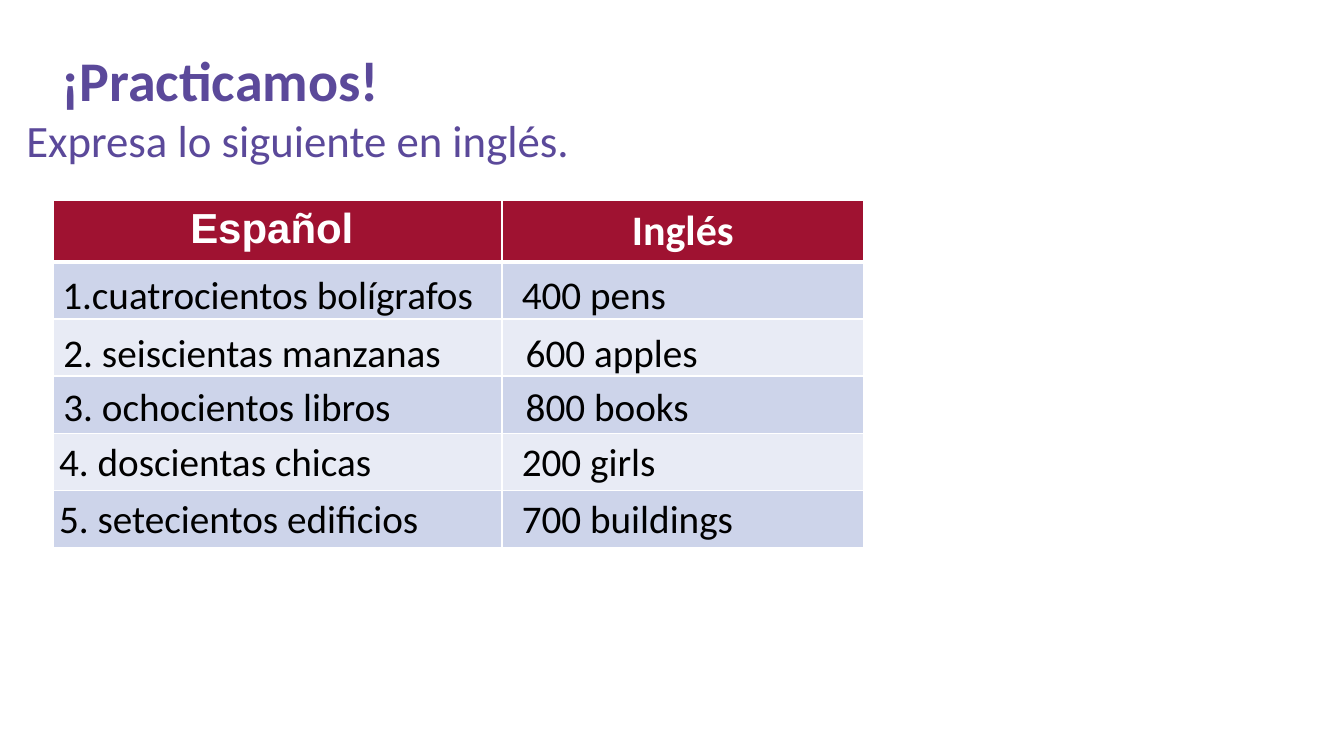
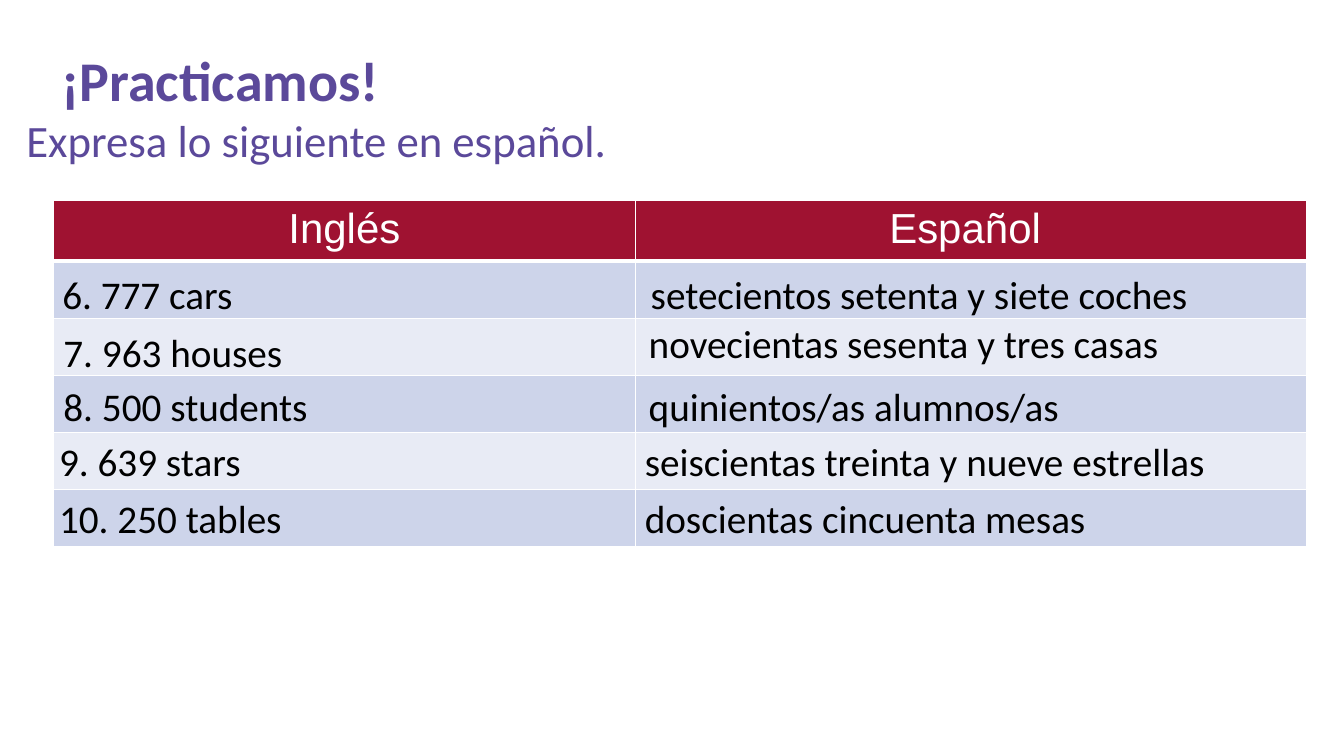
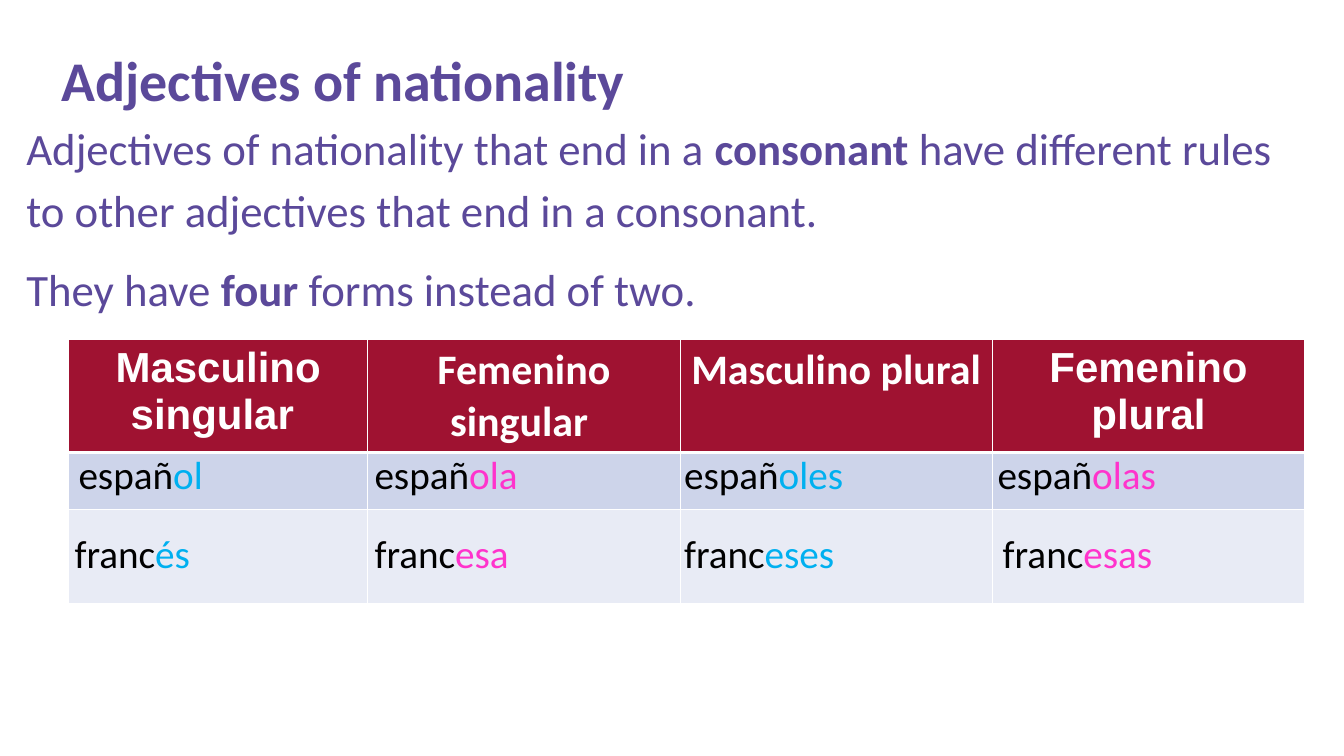
from dataclasses import dataclass

from lxml import etree
from pptx import Presentation
from pptx.dml.color import RGBColor
from pptx.enum.text import MSO_ANCHOR, MSO_AUTO_SIZE, PP_ALIGN
from pptx.oxml.ns import qn
from pptx.util import Cm, Pt

LEFT, CENTER = PP_ALIGN.LEFT, PP_ALIGN.CENTER
TOP = MSO_ANCHOR.TOP
NO_FIT, GROW = MSO_AUTO_SIZE.NONE, MSO_AUTO_SIZE.SHAPE_TO_FIT_TEXT

PURPLE, RED, WHITE, BLACK = "5B499A", "9F1231", "FFFFFF", "000000"
BANDS = ("CDD4EA", "E8EBF5")
BLUE, PINK = "00B0F0", "FF33CC"
TEXT_FONT, HEADER_FONT = "Calibri", "Arial"
TITLE_SIZE, INTRO_SIZE, HEADER_SIZE, WORD_SIZE = 40, 32, 30, 28
THIN, THICK = 0.96, 3

# Positions shared by the two exercises, in centimetres
EXERCISE_TOPS = (6.68, 8.15, 9.5, 10.9, 12.34)
QUESTION_LEFTS = (1.32, 1.35, 1.35, 1.24, 1.24)
ANSWER_SHIFTS = (0, 0.1, 0.1, 0, 0)


@dataclass
class Piece:
    text: str
    color: str = BLACK
    bold: bool = False


@dataclass
class Word:
    pieces: list[Piece]
    left: float
    top: float
    width: float


@dataclass
class Header:
    text: str
    font: str = HEADER_FONT
    bold: bool = True


@dataclass
class Grid:
    left: float
    top: float
    columns: list[float]
    rows: list[float]
    headers: list[Header]


@dataclass
class Exercise:
    language: str
    grid: Grid
    questions: list[tuple[str, float]]
    answers: list[tuple[str, float]]
    answer_left: float
    # Answers set apart from the common grid: row -> (right, down)
    nudges: dict[int, tuple[float, float]]


def rgb(color: str) -> RGBColor:
    return RGBColor.from_string(color)


def style_run(run, size: float, color: str, bold: bool = False, name: str = TEXT_FONT) -> None:
    run.font.name = name
    run.font.size = Pt(size)
    run.font.bold = bold
    run.font.color.rgb = rgb(color)


def add_pieces(paragraph, pieces: list[Piece], size: float) -> None:
    for piece in pieces:
        run = paragraph.add_run()
        run.text = piece.text
        style_run(run, size, piece.color, piece.bold)


def place(shape, left: float, top: float, width: float, height: float) -> None:
    shape.left, shape.top = Cm(left), Cm(top)
    shape.width, shape.height = Cm(width), Cm(height)
    text_frame = shape.text_frame
    text_frame.word_wrap = True
    text_frame.auto_size = NO_FIT
    text_frame.vertical_anchor = TOP


def add_slide(presentation, title: str, intro: list[list[Piece]],
              line_spacing: float = 1.0, gap: float = 0):
    """Add a slide with its title and introduction in the placeholders."""
    slide = presentation.slides.add_slide(presentation.slide_layouts[1])
    place(slide.shapes.title, 1.3, 1.02, 29.21, 1.73)
    paragraph = slide.shapes.title.text_frame.paragraphs[0]
    paragraph.text = title
    paragraph.alignment = LEFT
    style_run(paragraph.runs[0], TITLE_SIZE, PURPLE, True)

    body = slide.placeholders[1]
    place(body, 0.41, 2.72, 33.05, 3.12)
    for index, pieces in enumerate(intro):
        text_frame = body.text_frame
        paragraph = text_frame.add_paragraph() if index else text_frame.paragraphs[0]
        properties = paragraph._p.get_or_add_pPr()
        properties.set("marL", "0")
        properties.set("indent", "0")
        etree.SubElement(properties, qn("a:buNone"))
        paragraph.line_spacing = line_spacing
        paragraph.space_before = Pt(gap if index else 0)
        add_pieces(paragraph, pieces, INTRO_SIZE)
    return slide


def add_borders(cell, top: float, bottom: float) -> None:
    properties = cell._tc.get_or_add_tcPr()
    for side, width in (("L", THIN), ("R", THIN), ("T", top), ("B", bottom)):
        line = etree.SubElement(properties, qn(f"a:ln{side}"), w=str(Pt(width)))
        fill = etree.SubElement(line, qn("a:solidFill"))
        etree.SubElement(fill, qn("a:srgbClr"), val=WHITE)


def add_grid(slide, grid: Grid) -> None:
    """Draw a header row above empty banded rows."""
    table = slide.shapes.add_table(
        len(grid.rows), len(grid.columns), Cm(grid.left), Cm(grid.top),
        Cm(sum(grid.columns)), Cm(sum(grid.rows))).table
    table.first_row = table.horz_banding = False
    for column, width in zip(table.columns, grid.columns):
        column.width = Cm(width)
    for number, (row, height) in enumerate(zip(table.rows, grid.rows)):
        row.height = Cm(height)
        for cell in row.cells:
            add_borders(cell, THICK if number == 1 else THIN, THIN if number else THICK)
            cell.fill.solid()
            cell.fill.fore_color.rgb = rgb(BANDS[(number - 1) % 2] if number else RED)
            cell.margin_left = cell.margin_right = Cm(0.2)
    for cell, header in zip(table.rows[0].cells, grid.headers):
        paragraph = cell.text_frame.paragraphs[0]
        paragraph.text = header.text
        paragraph.alignment = CENTER
        style_run(paragraph.runs[0], HEADER_SIZE, WHITE, header.bold, header.font)


def add_word(slide, word: Word) -> None:
    box = slide.shapes.add_textbox(0, 0, 0, 0)
    place(box, word.left, word.top, word.width, 1.42)
    box.text_frame.auto_size = GROW
    add_pieces(box.text_frame.paragraphs[0], word.pieces, WORD_SIZE)


def add_exercise(presentation, exercise: Exercise) -> None:
    intro = Piece(f"Expresa lo siguiente en {exercise.language}.", PURPLE)
    slide = add_slide(presentation, "¡Practicamos!", [[intro]])
    add_grid(slide, exercise.grid)
    for row, top in enumerate(EXERCISE_TOPS):
        text, width = exercise.questions[row]
        add_word(slide, Word([Piece(text)], QUESTION_LEFTS[row], top, width))
        text, width = exercise.answers[row]
        right, down = exercise.nudges.get(row, (0, 0))
        left = exercise.answer_left + ANSWER_SHIFTS[row] + right
        add_word(slide, Word([Piece(text)], left, top + down, width))


def exercise_grid(columns: list[float], headers: list[Header]) -> Grid:
    return Grid(1.35, 5.05, columns, [1.53] + [1.44] * 5, headers)


EXERCISES = [
    Exercise(
        "inglés",
        exercise_grid([11.3, 9.12], [Header("Español "), Header("Inglés", TEXT_FONT)]),
        [("1.cuatrocientos bolígrafos", 11.3), ("2. seiscientas manzanas", 10.64),
         ("3. ochocientos libros", 10.64), ("4. doscientas chicas", 11.05),
         ("5. setecientos edificios", 11.63)],
        [("400 pens", 8.84), ("600 apples", 8.41), ("800 books", 6.73),
         ("200 girls", 8.84), ("700 buildings", 7.85)],
        12.9, {}),
    Exercise(
        "español",
        exercise_grid([14.66, 16.92],
                      [Header("Inglés", bold=False), Header("Español ", bold=False)]),
        [("6. 777 cars", 8.1), ("7. 963 houses", 13.08), ("8. 500 students", 14.96),
         ("9. 639 stars", 14.73), ("10. 250 tables", 14.73)],
        [("setecientos setenta y siete coches", 16.46),
         ("novecientas sesenta y tres casas", 15.52),
         ("quinientos/as alumnos/as", 17.15),
         ("seiscientas treinta y nueve estrellas", 17.15),
         ("doscientas cincuenta mesas", 16.46)],
        16, {0: (0.15, 0), 1: (0, -0.23)}),
]

NATIONALITY_INTRO = [
    [Piece("Adjectives of nationality that end in a ", PURPLE),
     Piece("consonant", PURPLE, True),
     Piece(" have different rules to other adjectives that end in a consonant.", PURPLE)],
    [Piece("They have ", PURPLE), Piece("four", PURPLE, True),
     Piece(" forms instead of two.", PURPLE)],
]
NATIONALITY_GRID = Grid(
    1.73, 8.56, [7.54] + [7.87] * 3, [2.79, 1.43, 2.39],
    [Header("Masculino singular "), Header("Femenino singular ", TEXT_FONT),
     Header("Masculino plural", TEXT_FONT), Header("Femenino plural")])
# Stem, top, then ending, left and width for each form
NATIONALITIES = [
    ("españ", 11.23, [("ol", 1.73, 5.38), ("ola", 9.19, 5.38),
                      ("oles", 16.99, 7.47), ("olas", 24.89, 5.38)]),
    ("franc", 13.21, [("és", 1.63, 7.34), ("esa", 9.19, 7.8),
                      ("eses", 16.99, 7.75), ("esas", 25.02, 7.54)]),
]


def add_nationalities(presentation) -> None:
    slide = add_slide(presentation, "Adjectives of nationality", NATIONALITY_INTRO, 1.15, 12)
    add_grid(slide, NATIONALITY_GRID)
    for stem, top, forms in NATIONALITIES:
        for (ending, left, width), color in zip(forms, (BLUE, PINK) * 2):
            add_word(slide, Word([Piece(stem), Piece(ending, color)], left, top, width))


def main() -> None:
    presentation = Presentation()
    presentation.slide_width, presentation.slide_height = Cm(33.87), Cm(19.05)
    for exercise in EXERCISES:
        add_exercise(presentation, exercise)
    add_nationalities(presentation)
    presentation.save("out.pptx")


if __name__ == "__main__":
    main()
